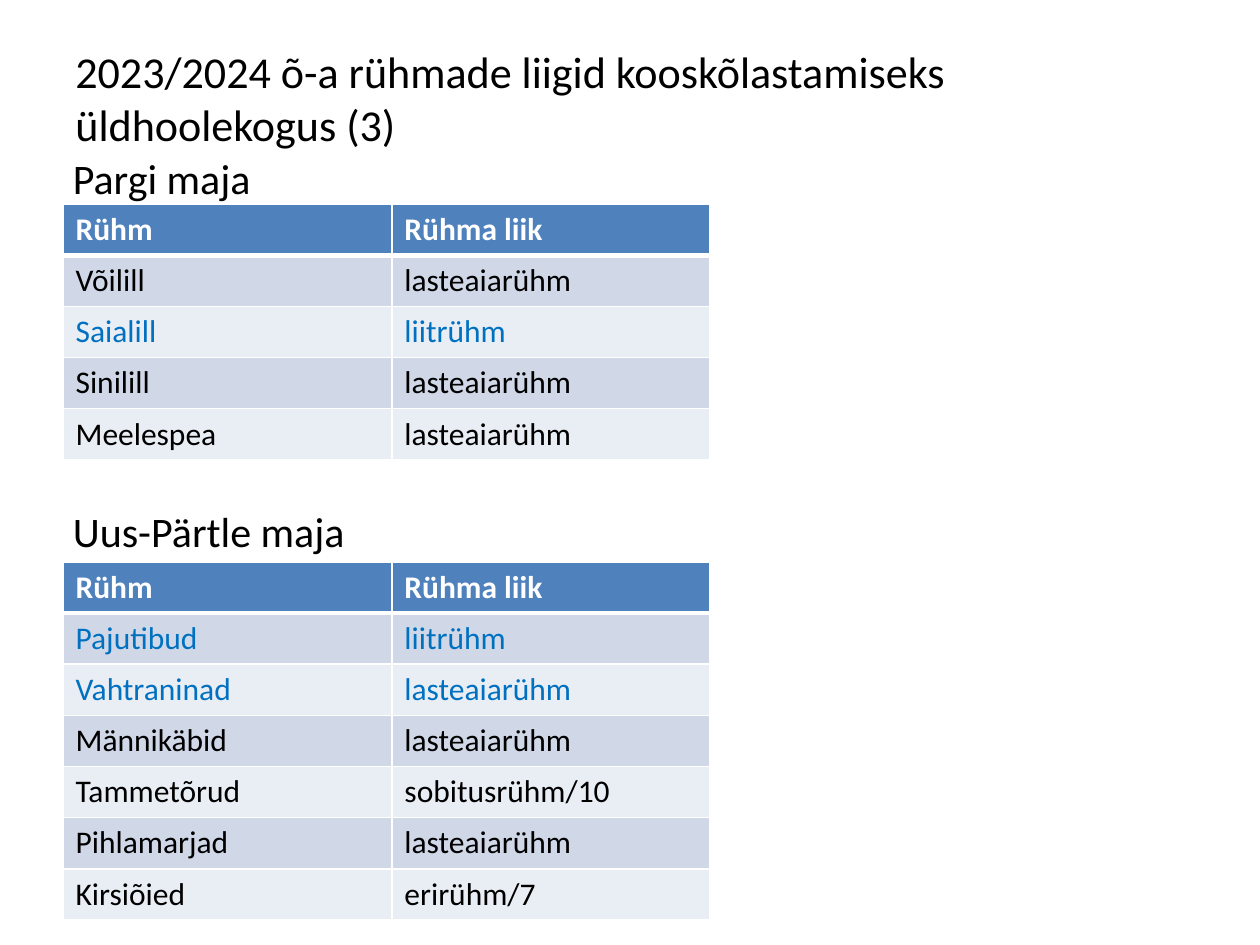
from lxml.etree import fromstring
from pptx import Presentation
from pptx.dml.color import RGBColor
from pptx.enum.text import MSO_ANCHOR
from pptx.oxml.ns import nsdecls
from pptx.util import Inches, Pt

BLACK, WHITE, BLUE = "000000", "FFFFFF", "0070C0"
HEADER_FILL, BANDS = "4F81BD", ("D0D8E8", "E9EDF4")
COLUMN_WIDTHS = (2.61, 2.52)
ROW_HEIGHT = 0.406
HEADER = ("Rühm", "Rühma liik")

TITLE = "2023/2024 õ-a rühmade liigid kooskõlastamiseks üldhoolekogus (3)"
HOUSES = [
    ("Pargi maja", (0.48, 1.16), (0.5, 1.62), [
        ("Võilill", "lasteaiarühm", BLACK),
        ("Saialill", "liitrühm", BLUE),
        ("Sinilill", "lasteaiarühm", BLACK),
        ("Meelespea", "lasteaiarühm", BLACK),
    ]),
    ("Uus-Pärtle maja", (0.48, 3.96), (0.5, 4.46), [
        ("Pajutibud", "liitrühm", BLUE),
        ("Vahtraninad", "lasteaiarühm", BLUE),
        ("Männikäbid", "lasteaiarühm", BLACK),
        ("Tammetõrud", "sobitusrühm/10", BLACK),
        ("Pihlamarjad", "lasteaiarühm", BLACK),
        ("Kirsiõied", "erirühm/7", BLACK),
    ]),
]


def color(value):
    return RGBColor.from_string(value)


def write(frame, text, size, text_color=BLACK, bold=False):
    span = frame.paragraphs[0].add_run()
    span.text = text
    span.font.color.rgb = color(text_color)
    for name, value in {"name": "Calibri", "size": Pt(size), "bold": bold}.items():
        setattr(span.font, name, value)


def add_text(page, left, top, width, height, text, size):
    box = page.shapes.add_textbox(Inches(left), Inches(top), Inches(width), Inches(height))
    for name, value in {"word_wrap": True, "vertical_anchor": MSO_ANCHOR.MIDDLE}.items():
        setattr(box.text_frame, name, value)
    write(box.text_frame, text, size)


def add_borders(cell, widths):
    properties = cell._tc.get_or_add_tcPr()
    for position, (side, width) in enumerate(widths.items()):
        line = fromstring(
            f'<a:ln{side} {nsdecls("a")} w="{Pt(width)}"><a:solidFill>'
            f'<a:srgbClr val="{WHITE}"/></a:solidFill></a:ln{side}>'
        )
        properties.insert(position, line)


def add_group_table(page, left, top, groups):
    rows = [(*HEADER, WHITE), *groups]
    table = page.shapes.add_table(
        len(rows), len(COLUMN_WIDTHS), Inches(left), Inches(top),
        Inches(sum(COLUMN_WIDTHS)), Inches(ROW_HEIGHT * len(rows)),
    ).table
    for column, width in zip(table.columns, COLUMN_WIDTHS):
        column.width = Inches(width)
    for row, (*texts, text_color) in enumerate(rows):
        table.rows[row].height = Inches(ROW_HEIGHT)
        fill = BANDS[(row - 1) % 2] if row else HEADER_FILL
        widths = {"L": 1, "R": 1, "T": 3 if row == 1 else 1, "B": 1 if row else 3}
        for column, text in enumerate(texts):
            cell = table.cell(row, column)
            cell.fill.solid()
            cell.fill.fore_color.rgb = color(fill)
            add_borders(cell, widths)
            write(cell.text_frame, text, 18, text_color, row == 0)


def add_house(page, name, name_at, table_at, groups):
    add_text(page, *name_at, 9, 0.5, name, 24)
    add_group_table(page, *table_at, groups)


def main():
    deck = Presentation()
    deck.slide_width, deck.slide_height = Inches(10), Inches(7.5)
    page = deck.slides.add_slide(deck.slide_layouts[6])
    add_text(page, 0.5, 0.3, 9, 0.95, TITLE, 25.2)
    for house in HOUSES:
        add_house(page, *house)
    deck.save("out.pptx")


if __name__ == "__main__":
    main()
